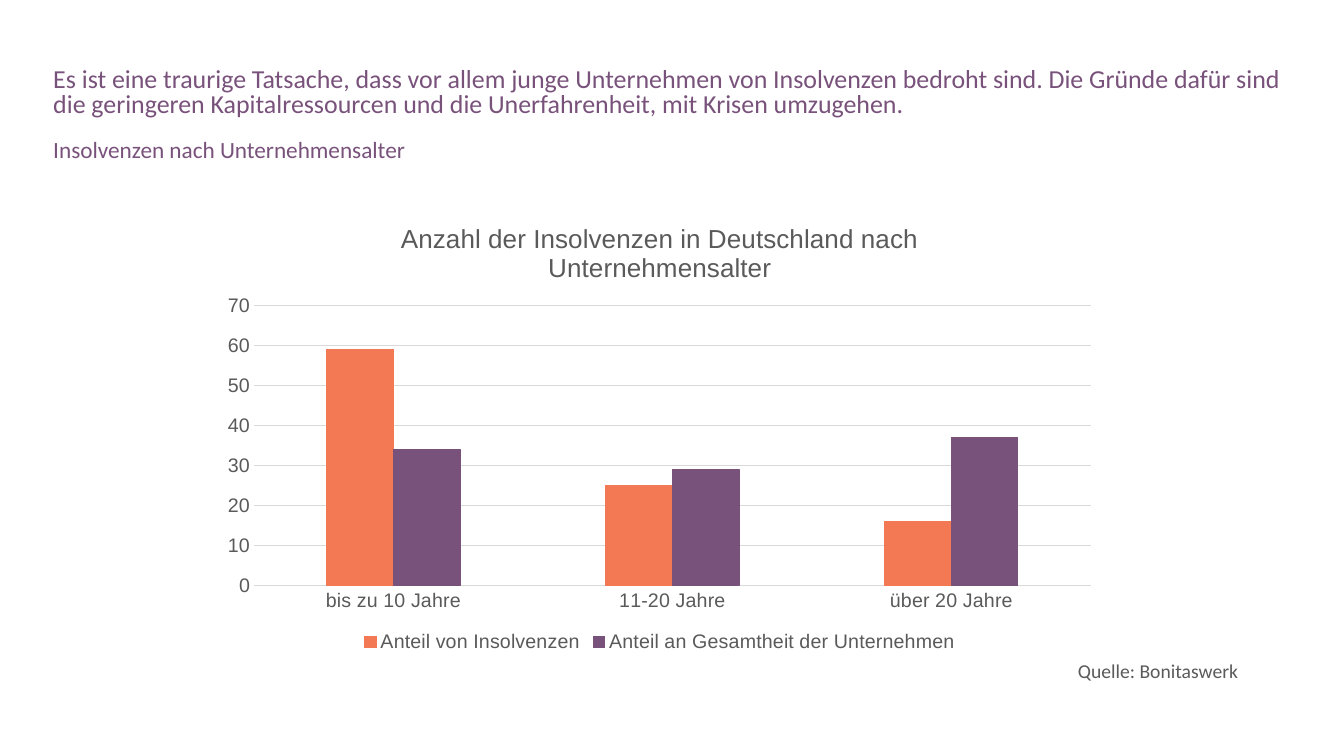
from lxml import etree
from pptx import Presentation
from pptx.chart.data import CategoryChartData
from pptx.dml.color import RGBColor
from pptx.enum.chart import XL_CHART_TYPE, XL_LEGEND_POSITION, XL_TICK_MARK
from pptx.oxml.ns import qn
from pptx.util import Inches, Pt

PURPLE = RGBColor(0x79, 0x52, 0x7B)
ORANGE = RGBColor(0xF2, 0x79, 0x54)
GREY = RGBColor(0x59, 0x5A, 0x59)
GRID = RGBColor(0xD9, 0xD9, 0xD9)


class SlideBuilder:
    text_font = "Calibri"
    chart_font = "Arial"

    def __init__(self, slide):
        self.slide = slide

    def style(self, font, name, size, color):
        font.name, font.size, font.color.rgb = name, Pt(size), color

    def hairline(self, line, color):
        line.color.rgb = color
        line.width = Pt(0.75)

    def text(self, content, box, size, color, spacing, insets=(0.1, 0.05)):
        frame = self.slide.shapes.add_textbox(*map(Inches, box)).text_frame
        frame.word_wrap = True
        frame.margin_left = frame.margin_right = Inches(insets[0])
        frame.margin_top = frame.margin_bottom = Inches(insets[1])
        paragraph = frame.paragraphs[0]
        paragraph.text = content
        paragraph.line_spacing = spacing
        self.style(paragraph.font, self.text_font, size, color)

    def place_plot(self, chart, chart_box, plot_box):
        """Fix the area inside the axes, given in slide inches."""
        area = chart.plots[0]._element.getparent()
        for automatic in area.findall(qn("c:layout")):
            area.remove(automatic)
        layout = etree.Element(qn("c:layout"))
        area.insert(0, layout)
        manual = etree.SubElement(layout, qn("c:manualLayout"))
        left, top, width, height = chart_box
        x, y, w, h = plot_box
        settings = (("layoutTarget", "inner"), ("xMode", "edge"), ("yMode", "edge"),
                    ("x", (x - left) / width), ("y", (y - top) / height),
                    ("w", w / width), ("h", h / height))
        for tag, value in settings:
            etree.SubElement(manual, qn(f"c:{tag}")).set("val", str(value))

    def column_chart(self, title, categories, series, box, plot_box):
        data = CategoryChartData()
        data.categories = categories
        for name, values, _ in series:
            data.add_series(name, values)
        chart = self.slide.shapes.add_chart(
            XL_CHART_TYPE.COLUMN_CLUSTERED, *map(Inches, box), data).chart
        self.style(chart.font, self.chart_font, 14, GREY)
        self.place_plot(chart, box, plot_box)

        # Title and legend
        chart.has_title = True
        heading = chart.chart_title.text_frame.paragraphs[0]
        heading.text = title
        self.style(heading.font, self.chart_font, 18.6, GREY)
        heading.font.bold = False
        chart.chart_title.include_in_layout = False
        chart.has_legend = True
        chart.legend.position = XL_LEGEND_POSITION.BOTTOM
        chart.legend.include_in_layout = False
        self.style(chart.legend.font, self.chart_font, 14, GREY)

        # Axes
        for axis in (chart.category_axis, chart.value_axis):
            axis.major_tick_mark = axis.minor_tick_mark = XL_TICK_MARK.NONE
            self.style(axis.tick_labels.font, self.chart_font, 14, GREY)
        self.hairline(chart.category_axis.format.line, GRID)
        shares = chart.value_axis
        shares.minimum_scale, shares.maximum_scale, shares.major_unit = 0, 70, 10
        shares.format.line.fill.background()
        self.hairline(shares.major_gridlines.format.line, GRID)

        # Columns
        plot = chart.plots[0]
        plot.vary_by_categories = False
        plot.gap_width, plot.overlap = 219, 0
        for columns, (_, _, color) in zip(plot.series, series):
            columns.format.fill.solid()
            columns.format.fill.fore_color.rgb = color
            self.hairline(columns.format.line, color)


def main():
    presentation = Presentation()
    presentation.slide_width = Inches(13.33)
    presentation.slide_height = Inches(7.5)
    builder = SlideBuilder(
        presentation.slides.add_slide(presentation.slide_layouts[6]))

    # Statement and subheading
    builder.text(
        "Es ist eine traurige Tatsache, dass vor allem junge Unternehmen von "
        "Insolvenzen bedroht sind. Die Gründe dafür sind die geringeren "
        "Kapitalressourcen und die Unerfahrenheit, mit Krisen umzugehen.",
        (0.43, 0.63, 12.54, 0.64), 18.5, PURPLE, 0.8)
    builder.text("Insolvenzen nach Unternehmensalter",
                 (0.43, 1.35, 12.54, 0.33), 16.6, PURPLE, 0.8)

    # Insolvencies by company age
    builder.column_chart(
        "Anzahl der Insolvenzen in Deutschland nach Unternehmensalter",
        ("bis zu 10 Jahre", "11-20 Jahre", "über 20 Jahre"),
        (("Anteil von Insolvenzen", (59, 25, 16), ORANGE),
         ("Anteil an Gesamtheit der Unternehmen", (34, 29, 37), PURPLE)),
        (2.09, 2, 8.91, 4.52), (2.52, 3.03, 8.3, 2.78))

    # Source
    builder.text("Quelle: Bonitaswerk", (10.6, 6.48, 1.85, 0.34),
                 14, GREY, 1.07, insets=(0.09, 0.04))

    presentation.save("out.pptx")


if __name__ == "__main__":
    main()
